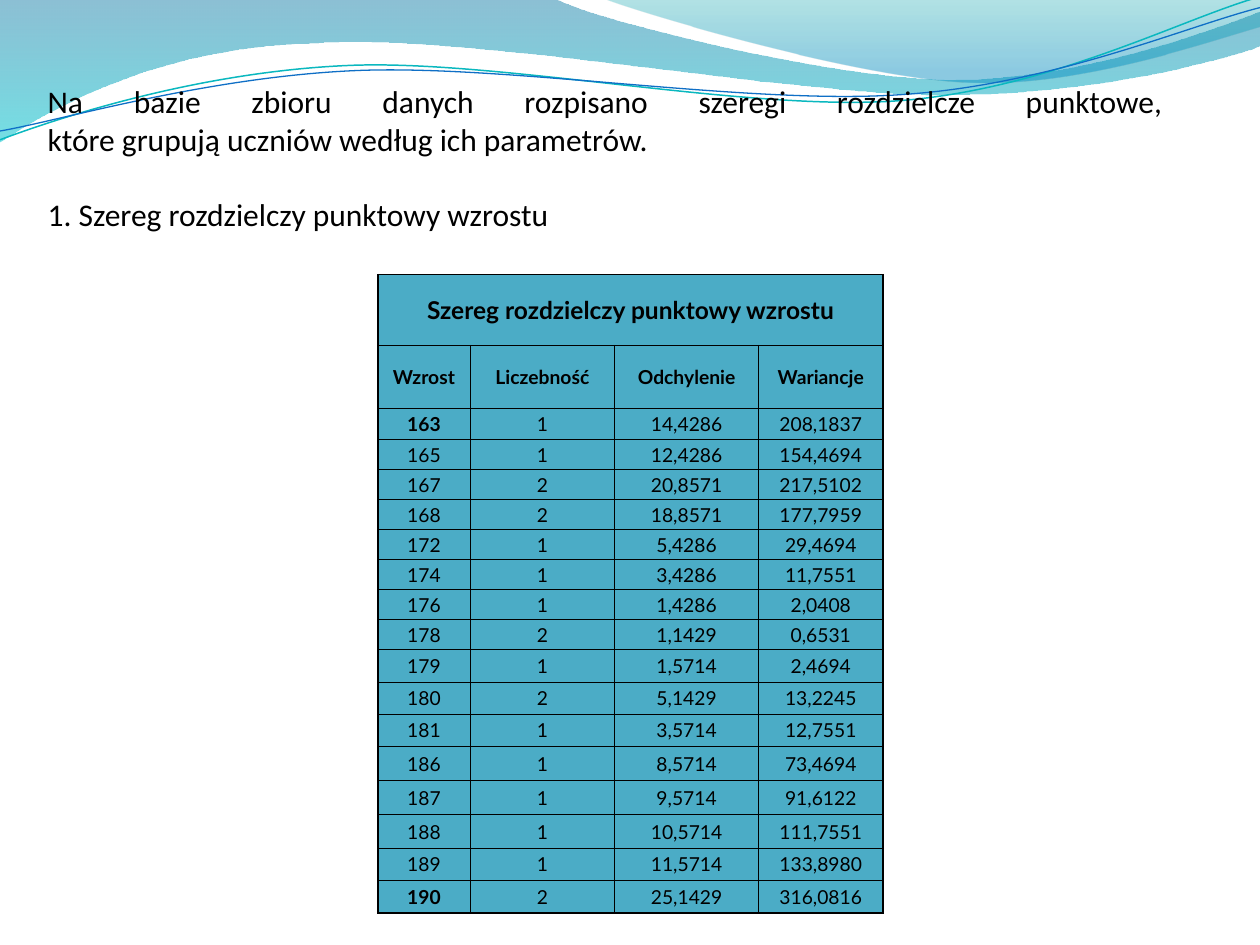
from math import cos, radians, sin

from lxml.etree import SubElement
from pptx import Presentation
from pptx.dml.color import RGBColor
from pptx.enum.text import MSO_ANCHOR, MSO_AUTO_SIZE, PP_ALIGN
from pptx.oxml.ns import qn
from pptx.util import Inches, Pt

BLACK = RGBColor(0x00, 0x00, 0x00)
TABLE_BLUE = RGBColor(0x4B, 0xAC, 0xC6)
DEEP_BLUE = RGBColor(0x00, 0x74, 0xA1)
AQUA = RGBColor(0x00, 0xC6, 0xCF)
TEAL = RGBColor(0x00, 0xA1, 0xA9)
SKY = RGBColor(0x00, 0x8B, 0xBF)
LINE_TEAL = RGBColor(0x0A, 0xB8, 0xBF)
LINE_BLUE = RGBColor(0x0F, 0x6F, 0xC6)

# Text above the table
INTRO = [
    "Na bazie zbioru danych rozpisano szeregi rozdzielcze punktowe, \v"
    "które grupują uczniów według ich parametrów.",
    "1. Szereg rozdzielczy punktowy wzrostu",
]

# Table: title, headings, data
TITLE = "Szereg rozdzielczy punktowy wzrostu"
HEADINGS = ("Wzrost", "Liczebność", "Odchylenie", "Wariancje")
DATA = [
    ("163", "1", "14,4286", "208,1837"),
    ("165", "1", "12,4286", "154,4694"),
    ("167", "2", "20,8571", "217,5102"),
    ("168", "2", "18,8571", "177,7959"),
    ("172", "1", "5,4286", "29,4694"),
    ("174", "1", "3,4286", "11,7551"),
    ("176", "1", "1,4286", "2,0408"),
    ("178", "2", "1,1429", "0,6531"),
    ("179", "1", "1,5714", "2,4694"),
    ("180", "2", "5,1429", "13,2245"),
    ("181", "1", "3,5714", "12,7551"),
    ("186", "1", "8,5714", "73,4694"),
    ("187", "1", "9,5714", "91,6122"),
    ("188", "1", "10,5714", "111,7551"),
    ("189", "1", "11,5714", "133,8980"),
    ("190", "2", "25,1429", "316,0816"),
]
COL_WIDTHS = [0.73, 1.15, 1.14, 0.99]
TABLE_HEIGHT = 5.07
TOP_ROWS = [0.56, 0.5, 0.25]
BOTTOM_ROWS = [0.26, 0.25, 0.26, 0.27, 0.27, 0.27, 0.25, 0.26]
EVEN_ROWS = len(DATA) + 2 - len(TOP_ROWS) - len(BOTTOM_ROWS)
EVEN_HEIGHT = (TABLE_HEIGHT - sum(TOP_ROWS) - sum(BOTTOM_ROWS)) / EVEN_ROWS
ROW_HEIGHTS = TOP_ROWS + [EVEN_HEIGHT] * EVEN_ROWS + BOTTOM_ROWS

# Header waves: box, then steps (two numbers: straight, six: Bezier), in inches
BANDS = [
    ((-0.01, -0.01, 10.02, 1.14),
     [(0, 0), (4.4, -0.01), (4.76, 0.17, 6.64, 0.63, 7.58, 0.63),
      (8.53, 0.63, 9.58, 0.26, 10, 0.09), (10.01, 0.36),
      (9.83, 0.44, 8.7, 0.76, 7.46, 0.75), (6.22, 0.75, 3.82, 0.28, 2.57, 0.34),
      (1.29, 0.36, 0.46, 0.83, -0.01, 1.13), (0, 0)],
     [(0, DEEP_BLUE, 45), (1, AQUA, 55)]),
    ((4.79, -0.01, 5.21, 0.7),
     [(4.79, -0.01), (5.09, 0.11, 6.82, 0.62, 7.69, 0.65),
      (8.56, 0.69, 9.61, 0.32, 10, 0.21), (10, 0), (4.79, -0.01)],
     [(0, TEAL, 30), (0.8, SKY, 45)]),
]
WAVE_LINES = [
    ((-0.02, 0.22, 10.02, 0.71),
     [(0, 1.11), (0.48, 0.93, 1.58, 0.57, 2.77, 0.52),
      (3.95, 0.47, 5.93, 0.89, 7.13, 0.8), (8.33, 0.71, 9.38, 0.15, 9.98, -0.02)],
     LINE_TEAL, 0.85),
    ((-0.02, 0.3, 10.03, 0.58),
     [(0, 1.04), (0.47, 0.96, 1.64, 0.61, 2.83, 0.56),
      (4.03, 0.51, 5.97, 0.84, 7.17, 0.75), (8.36, 0.67, 9.41, 0.21, 10, 0.06)],
     LINE_BLUE, 0.75),
]
WAVE_TILT = -2.7


def add_outline(s, box, steps, close, tilt=0):
    """Build a freeform through the step ends, then bend its Bezier steps."""
    ends = [(Inches(step[-2]), Inches(step[-1])) for step in steps]
    builder = s.shapes.build_freeform(*ends[0])
    builder.add_line_segments(ends[1:], close=close)
    sp = builder.convert_to_shape()
    sp.shadow.inherit = False
    left, top, width, height = box
    sp.left, sp.top, sp.width, sp.height = (Inches(v) for v in box)
    sp.rotation = tilt
    mid_x, mid_y, angle = left + width / 2, top + height / 2, radians(-tilt)

    path = sp._element.xpath(".//a:path")[0]
    path.set("w", str(Inches(width)))
    path.set("h", str(Inches(height)))
    for segment, step in zip(list(path), steps):
        if len(step) == 6:
            segment.tag = qn("a:cubicBezTo")
        for pt in list(segment):
            segment.remove(pt)
        for x, y in zip(step[::2], step[1::2]):
            dx, dy = x - mid_x, y - mid_y
            local_x = dx * cos(angle) - dy * sin(angle) + width / 2
            local_y = dx * sin(angle) + dy * cos(angle) + height / 2
            SubElement(segment, qn("a:pt"), x=str(Inches(local_x)), y=str(Inches(local_y)))
    return sp


def add_band(s, box, steps, stops):
    sp = add_outline(s, box, steps, True)
    sp.line.fill.background()
    sp.fill.gradient()
    sp.fill.gradient_angle = 270
    for stop, (position, color, _) in zip(sp.fill.gradient_stops, stops):
        stop.position = position
        stop.color.rgb = color
    for clr, (_, _, opacity) in zip(sp._element.xpath(".//a:gs/a:srgbClr"), stops):
        SubElement(clr, qn("a:alpha"), val=str(opacity * 1000))


def add_wave_line(s, box, steps, color, width):
    sp = add_outline(s, box, steps, False, WAVE_TILT)
    sp.fill.background()
    sp.line.color.rgb = color
    sp.line.width = Pt(width)


def set_borders(cell, widths):
    tc_pr = cell._tc.get_or_add_tcPr()
    for i, (side, width) in enumerate(zip("LRTB", widths)):
        ln = tc_pr.makeelement(qn(f"a:ln{side}"), {"w": str(Pt(width))})
        fill = SubElement(ln, qn("a:solidFill"))
        SubElement(fill, qn("a:srgbClr"), val=str(BLACK))
        tc_pr.insert(i, ln)


def style_run(r, font, size, bold=False):
    r.font.name, r.font.size, r.font.bold = font, Pt(size), bold
    r.font.color.rgb = BLACK


def add_intro(s):
    box = s.shapes.add_textbox(Inches(0.28), Inches(0.6), Inches(9.45), Inches(1.31))
    tf = box.text_frame
    tf.word_wrap = True
    tf.auto_size = MSO_AUTO_SIZE.SHAPE_TO_FIT_TEXT
    tf.text = "\n".join(INTRO)
    for p in tf.paragraphs:
        p.alignment = PP_ALIGN.JUSTIFY
        for r in p.runs:
            style_run(r, "Calibri", 18)
    tf.paragraphs[1].space_before = Pt(21.5)


def add_height_table(s):
    rows = [(TITLE, "", "", ""), HEADINGS] + DATA
    last_row, last_col = len(rows) - 1, len(HEADINGS) - 1
    table = s.shapes.add_table(len(rows), len(HEADINGS), Inches(3), Inches(2.18),
                               Inches(sum(COL_WIDTHS)), Inches(TABLE_HEIGHT)).table
    table.first_row = table.horz_banding = False
    for col, width in zip(table.columns, COL_WIDTHS):
        col.width = Inches(width)
    for row, height in zip(table.rows, ROW_HEIGHTS):
        row.height = Inches(height)
    table.cell(0, 0).merge(table.cell(0, last_col))
    for i, texts in enumerate(rows):
        for j, text in enumerate(texts):
            cell = table.cell(i, j)
            cell.fill.solid()
            cell.fill.fore_color.rgb = TABLE_BLUE
            cell.vertical_anchor = MSO_ANCHOR.MIDDLE
            cell.margin_left = cell.margin_right = cell.margin_top = cell.margin_bottom = 0
            # Thicker lines on the outer edge
            outer = (j == 0, j == last_col or i == 0, i == 0, i == last_row)
            set_borders(cell, [1 if edge else 0.5 for edge in outer])
            if not text:
                continue
            cell.text = text
            p = cell.text_frame.paragraphs[0]
            p.alignment = PP_ALIGN.CENTER
            # Headings and the two extreme heights are bold
            bold = i < 2 or (j == 0 and i in (2, last_row))
            style_run(p.runs[0], "Lato", 14 if i == 0 else 11, bold)


def main():
    prs = Presentation()
    prs.slide_width, prs.slide_height = Inches(10), Inches(7.5)
    s = prs.slides.add_slide(prs.slide_layouts[6])
    for band in BANDS:
        add_band(s, *band)
    for wave in WAVE_LINES:
        add_wave_line(s, *wave)
    add_intro(s)
    add_height_table(s)
    prs.save("out.pptx")


if __name__ == "__main__":
    main()
